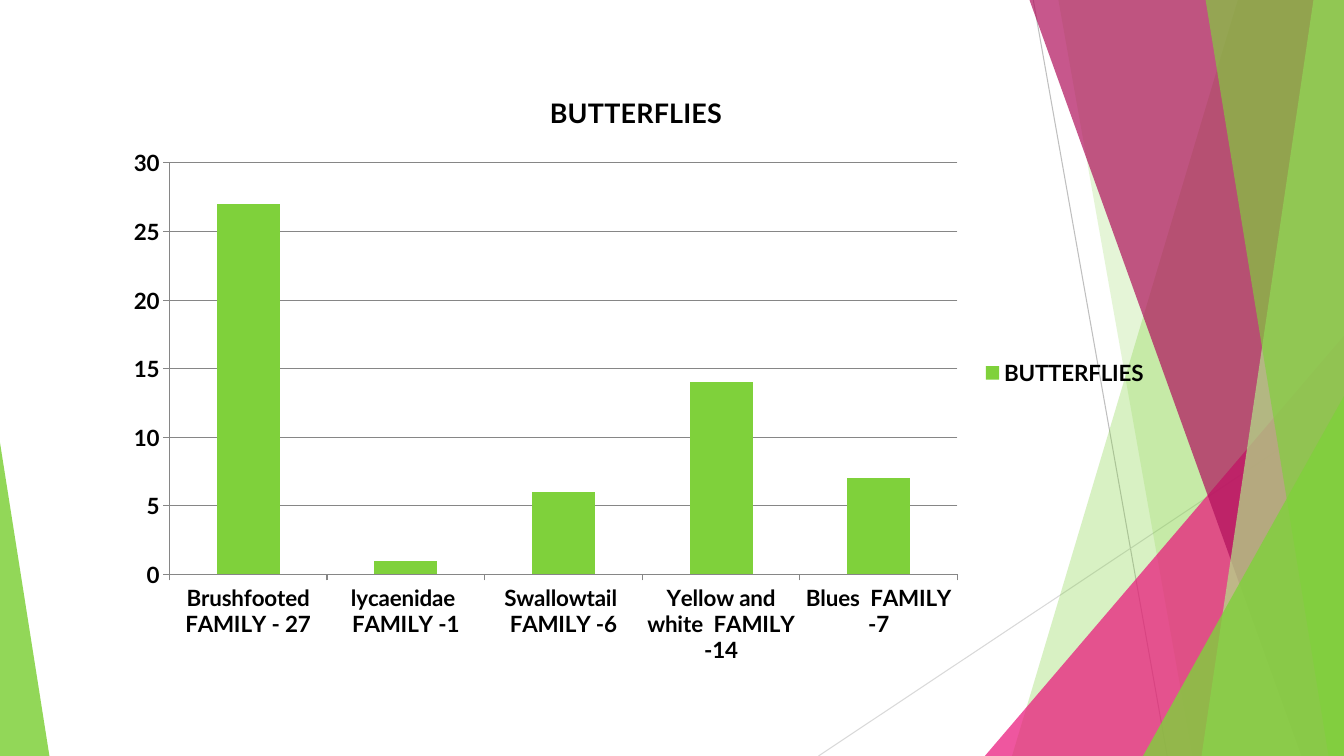
from pptx import Presentation
from pptx.chart.data import CategoryChartData
from pptx.dml.color import RGBColor as RGB
from pptx.enum.chart import XL_CHART_TYPE as CHART, XL_LEGEND_POSITION as LEGEND, XL_TICK_MARK as TICK
from pptx.enum.shapes import MSO_CONNECTOR as CONN, MSO_SHAPE as SHAPE
from pptx.oxml.ns import qn
from pptx.util import Inches, Pt
from lxml.etree import SubElement

THEME = dict(font="Lato", text="000000", body=16, title=19.2, green="7FD13B",
             pale="B2E389", pink="EA157A", plum="B0105C", grid="868686",
             line="BFBFBF", faint="D9D9D9")

prs = Presentation()
prs.slide_width, prs.slide_height = Inches(13.33), Inches(7.5)
W, H = prs.slide_width / 100, prs.slide_height / 100
s = prs.slides.add_slide(prs.slide_layouts[6])


def write(tf, text, size=THEME["body"], color=THEME["text"], bold=True):
    r = tf.paragraphs[0].add_run()
    r.text = text
    r.font.name, r.font.size, r.font.bold = THEME["font"], Pt(size), bold
    r.font.color.rgb = RGB.from_string(color)


def paint(sp, color, opacity):
    sp.shadow.inherit = False
    sp.line.fill.background()
    sp.fill.solid()
    sp.fill.fore_color.rgb = RGB.from_string(THEME[color])
    clr = sp.fill._xPr.find(qn("a:solidFill"))[0]
    SubElement(clr, qn("a:alpha")).set("val", str(opacity * 1000))


for x1, y1, x2, y2, color in [(76.88, 0, 86.85, 100, "line"),
                              (100, 53.73, 60.9, 100, "faint")]:
    cn = s.shapes.add_connector(CONN.STRAIGHT, int(x1 * W), int(y1 * H), int(x2 * W), int(y2 * H))
    cn.line.color.rgb = RGB.from_string(THEME[color])
    cn.line.width = Pt(0.75)
    SubElement(cn._element.spPr, qn("a:effectLst"))

panels = [
    ("band", (92.1, 75.3), "green", 30),
    ("band", (78.75, 88.73), "green", 20),
    ("triangle", (73.28, 44.4, 26.72, 1), "pink", 72),
    ("band", (76.6, 96.83), "plum", 70),
    ("band", (97.73, 89.4), "pale", 70),
    ("band", (89.7, 98.85), "green", 65),
    ("triangle", (85.05, 52.4, 14.95, 1), "green", 80),
    ("triangle", (0, 58.53, 3.68, 0), "green", 85),
]
for kind, place, color, opacity in panels:
    if kind == "band":
        top, bottom = place
        fb = s.shapes.build_freeform(int(top * W), 0)
        fb.add_line_segments([(int(x * W), int(y * H)) for x, y in
                              [(100, 0), (100, 100), (bottom, 100)]], close=True)
        sp = fb.convert_to_shape()
    else:
        left, top, width, apex = place
        sp = s.shapes.add_shape(SHAPE.ISOSCELES_TRIANGLE, int(left * W), int(top * H),
                                int(width * W), int((100 - top) * H))
        sp.adjustments[0] = apex
    paint(sp, color, opacity)

data = CategoryChartData()
data.categories = ["Brushfooted FAMILY - 27", "lycaenidae  FAMILY -1", "Swallowtail  FAMILY -6",
                   "Yellow and white  FAMILY -14", "Blues  FAMILY -7"]
data.add_series("BUTTERFLIES", [27, 1, 6, 14, 7])
chart = s.shapes.add_chart(CHART.COLUMN_CLUSTERED, int(8.4 * W), int(9.33 * H),
                           int(77.87 * W), int(80 * H), data).chart
chart.font.name, chart.font.size, chart.font.bold = THEME["font"], Pt(THEME["body"]), True
chart.font.color.rgb = RGB.from_string(THEME["text"])
chart.has_title = True
write(chart.chart_title.text_frame, "BUTTERFLIES", size=THEME["title"])
chart.has_legend = True
chart.legend.position = LEGEND.RIGHT
chart.legend.include_in_layout = False

plot = chart.plots[0]
plot.gap_width, plot.vary_by_categories = 150, False
fill = plot.series[0].format.fill
fill.solid()
fill.fore_color.rgb = RGB.from_string(THEME["green"])

val, cat = chart.value_axis, chart.category_axis
val.minimum_scale, val.maximum_scale, val.major_unit = 0, 30, 5
val.has_major_gridlines = True
for axis in (val, cat):
    axis.major_tick_mark = TICK.OUTSIDE
for part in (val, cat, val.major_gridlines):
    part.format.line.color.rgb = RGB.from_string(THEME["grid"])
    part.format.line.width = Pt(0.75)

prs.save("out.pptx")
